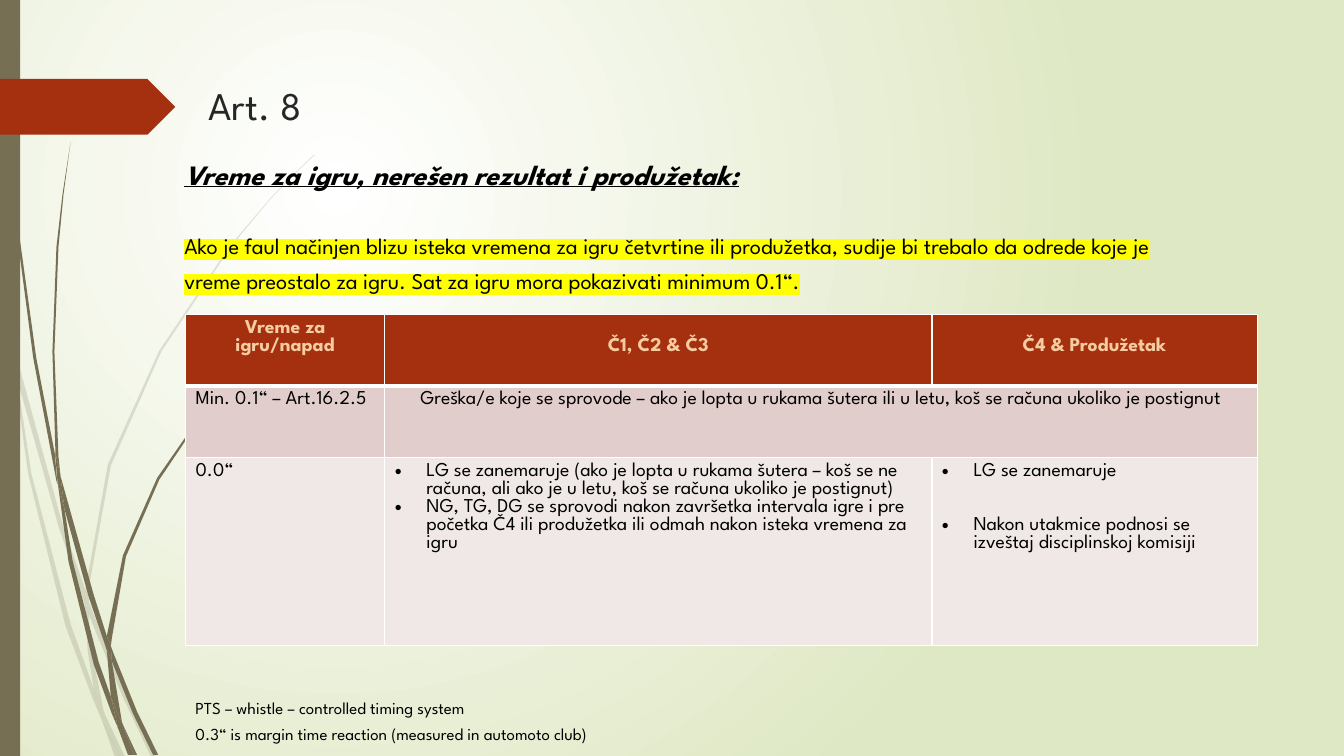
from lxml import etree
from pptx import Presentation
from pptx.dml.color import RGBColor
from pptx.enum import shapes, text
from pptx.oxml import ns
from pptx.util import Pt

COLORS = {"olive": "766F54", "rust": "A53010", "white": "FFFFFF", "meadow": "DFE8C4", "title": "262626",
          "black": "000000", "header": "F5CBA0", "marker": "FFFF00", "rose": "E1CDCC", "blush": "F0E8E7"}
FONT = "League Spartan"
PALE_WISPS = [
    [(11, 350), (9, 322), (0, 282), (0, 299), (10, 344)],
    [(58, 522), (84, 599), (85, 586), (62, 520), (14, 345), (17, 376)],
    [(92, 607), (88, 596), (88, 610), (123, 694), (150, 751), (155, 751), (127, 692)],
    [(119, 751), (124, 751), (105, 711)],
    [(93, 683), (70, 619), (31, 469), (17, 376), (11, 350), (28, 470), (65, 621), (92, 693), (101, 714), (99, 707)],
    [(84, 599), (87, 646), (93, 683), (96, 692), (105, 711), (103, 706), (91, 646), (88, 610), (88, 608)],
    [(88, 584), (110, 462), (160, 349), (229, 245), (268, 198), (290, 175), (312, 154), (312, 153), (289, 175),
     (268, 197), (228, 244), (158, 348), (107, 461), (85, 584), (85, 586), (88, 596)],
    [(101, 714), (114, 751), (119, 751)],
    [(88, 608), (88, 610), (88, 596), (85, 586), (84, 599)],
    [(96, 692), (93, 683), (99, 707), (101, 714), (119, 751), (105, 711)]]
DARK_WISPS = [
    [(7, 110), (17, 233), (33, 355), (56, 477), (57, 481), (55, 457), (55, 453), (36, 355), (19, 232), (8, 109),
     (5, 48), (4, 0), (3, 0), (4, 48)],
    [(88, 592), (106, 645), (106, 633), (106, 631), (93, 590), (60, 472), (64, 505)],
    [(113, 649), (110, 641), (111, 656), (132, 708), (152, 749), (157, 749), (136, 706)],
    [(110, 691), (98, 657), (72, 556), (64, 505), (57, 477), (68, 557), (93, 659), (111, 708), (117, 722), (116, 717)],
    [(60, 472), (58, 453), (54, 349), (58, 245), (63, 193), (70, 141), (62, 193), (56, 245), (52, 349), (55, 449)],
    [(133, 749), (136, 749), (122, 719)],
    [(57, 477), (64, 505), (60, 472), (55, 449), (55, 453)],
    [(111, 633), (125, 552), (158, 476), (205, 406), (231, 374), (245, 359), (261, 344), (260, 344), (245, 358),
     (231, 373), (204, 405), (156, 474), (122, 551), (106, 631), (110, 641)],
    [(117, 722), (127, 749), (131, 749)],
    [(106, 645), (110, 691), (116, 706), (122, 719), (121, 716), (111, 656), (109, 651)],
    [(106, 645), (109, 651), (111, 656), (110, 641), (106, 631), (106, 633)],
    [(116, 706), (110, 691), (116, 717), (117, 722), (130, 749), (133, 749), (122, 719)]]


def apply(target, **formats):
    """Set every given format value as an attribute of the target."""
    for name, value in formats.items():
        setattr(target, name, value)


def rgb(color):
    """Look up a named colour."""
    return RGBColor.from_string(COLORS[color])


def paint(shape, color):
    """Fill a shape flat, with neither line nor shadow."""
    shape.fill.solid()
    shape.fill.fore_color.rgb = rgb(color)
    shape.line.fill.background()
    shape.shadow.inherit = False


def write(paragraph, words, color, **formats):
    """Add one formatted run to a paragraph."""
    run = paragraph.add_run()
    run.text = words
    run.font.color.rgb = rgb(color)
    apply(run.font, name=FONT, **formats)
    return run


def add_background(slide):
    """Give the slide its round glow."""
    fill = slide.background.fill
    fill.gradient()
    for stop, color in zip(fill.gradient_stops, ("white", "meadow")):
        stop.color.rgb = rgb(color)
    linear = slide.element.find(".//" + ns.qn("a:lin"))
    glow = etree.Element(ns.qn("a:path"), path="circle")
    etree.SubElement(glow, ns.qn("a:fillToRect"), l="50000", t="50000", r="100000", b="100000")
    linear.getparent().replace(linear, glow)


def add_wisps(slide, corner, outlines, alpha=100):
    """Draw one group of grass blades from a corner, in hundredths of an inch."""
    group = slide.shapes.add_group_shape()
    for outline in outlines:
        builder = group.shapes.build_freeform(*outline[0], scale=Pt(0.72))
        builder.add_line_segments(outline[1:], close=True)
        blade = builder.convert_to_shape(*map(Pt, corner))
        paint(blade, "olive")
        color = blade.element.find(".//" + ns.qn("a:srgbClr"))
        etree.SubElement(color, ns.qn("a:alpha"), val=str(alpha * 1000))


def add_edge(slide, box):
    """Draw the side bar and the arrow tag in the left margin."""
    left, top, width, height = box
    for kind, offset, breadth, depth, color in (
            (shapes.MSO_SHAPE.RECTANGLE, 0, 14.4, height, "olive"),
            (shapes.MSO_SHAPE.PENTAGON, 56.4, width, 39.8, "rust")):
        paint(slide.shapes.add_shape(kind, *map(Pt, (left, top + offset, breadth, depth))), color)


def add_title(slide, box, words):
    """Place the title placeholder in the box."""
    title = slide.shapes.title
    apply(title, **dict(zip(("left", "top", "width", "height"), map(Pt, box))))
    apply(title.text_frame, vertical_anchor=text.MSO_ANCHOR.MIDDLE, word_wrap=True)
    paragraph = title.text_frame.paragraphs[0]
    paragraph.alignment = text.PP_ALIGN.LEFT
    write(paragraph, words, "title", size=Pt(28))


def add_text(slide, box, lines):
    """Write lines, each with its gap above and formats, and return the runs."""
    frame = slide.shapes.add_textbox(*map(Pt, box)).text_frame
    frame.word_wrap = True
    runs = []
    for index, (words, gap, formats) in enumerate(lines):
        paragraph = frame.add_paragraph() if index else frame.paragraphs[0]
        apply(paragraph, line_spacing=1.3, space_before=Pt(gap))
        runs.append(write(paragraph, words, "black", **formats))
    return runs


def highlight(run):
    """Mark a run with the yellow marker."""
    marker = etree.Element(ns.qn("a:highlight"))
    etree.SubElement(marker, ns.qn("a:srgbClr"), val=COLORS["marker"])
    run.font._element.find(ns.qn("a:solidFill")).addnext(marker)


def add_borders(cell, widths):
    """Draw white cell borders, given widths for left, right, top and bottom."""
    for index, (side, width) in enumerate(zip("LRTB", widths)):
        line = etree.Element(ns.qn("a:ln" + side), w=str(Pt(width)))
        fill = etree.SubElement(line, ns.qn("a:solidFill"))
        etree.SubElement(fill, ns.qn("a:srgbClr"), val=COLORS["white"])
        cell._tc.get_or_add_tcPr().insert(index, line)


def add_bullet(paragraph):
    """Give a paragraph a hanging bullet."""
    properties = paragraph._p.get_or_add_pPr()
    properties.set("marL", str(Pt(22.5)))
    properties.set("indent", str(Pt(-22.5)))
    etree.SubElement(properties, ns.qn("a:buFont"), typeface="Arial")
    etree.SubElement(properties, ns.qn("a:buChar"), char="•")


def fill_cell(cell, row, column, entries):
    """Format one table cell by its place and write its paragraphs."""
    header = row == 0
    cell.fill.solid()
    cell.fill.fore_color.rgb = rgb(("rust", "rose", "blush")[row])
    add_borders(cell, (1, 1, 3 if row == 1 else 1, 3 if header else 1))
    cell.margin_top = Pt(16.5 if header and column else 3.6)
    centred = header or (row == 1 and column)
    for index, words in enumerate(entries):
        paragraph = cell.text_frame.add_paragraph() if index else cell.text_frame.paragraphs[0]
        paragraph.alignment = text.PP_ALIGN.CENTER if centred else text.PP_ALIGN.LEFT
        paragraph.space_before = Pt(25.8 if index and column == 2 else 0)
        if row == 2 and column:
            add_bullet(paragraph)
        write(paragraph, words, "header" if header else "black", size=Pt(14), bold=header)


def add_rules_table(slide, box, rows):
    """Build the table of rules by remaining time in the box."""
    table = slide.shapes.add_table(3, 3, *map(Pt, box)).table
    for column, width in zip(table.columns, (142.4, 390.8, 232.4)):
        column.width = Pt(width)
    for row, height in zip(table.rows, (51, 51, 134.4)):
        row.height = Pt(height)
    for row_index, row in enumerate(rows):
        for column_index, entries in enumerate(row):
            fill_cell(table.cell(row_index, column_index), row_index, column_index, entries)
    table.cell(1, 1).merge(table.cell(1, 2))


presentation = Presentation()
apply(presentation, slide_width=Pt(960), slide_height=Pt(540))
slide = presentation.slides.add_slide(presentation.slide_layouts[5])
add_background(slide)
add_wisps(slide, (0, 0), PALE_WISPS, alpha=20)
add_wisps(slide, (0, 0), DARK_WISPS)
add_edge(slide, (0, 0, 125.2, 540))
add_title(slide, (141.8, 49.7, 128.2, 51.1), "Art. 8")
heading, advice = add_text(slide, (124.6, 101.5, 721.4, 94.3), [
    ("Vreme za igru, nerešen rezultat i produžetak:", 0, dict(size=Pt(20), bold=True, italic=True, underline=True)),
    ("Ako je faul načinjen blizu isteka vremena za igru četvrtine ili produžetka, sudije bi trebalo da odrede "
     "koje je vreme preostalo za igru. Sat za igru mora pokazivati minimum 0.1“.", 24, dict(size=Pt(16)))])
highlight(advice)
add_rules_table(slide, (132.5, 224.6, 765.6, 236.4), [
    [["Vreme za igru/napad"], ["Č1, Č2 & Č3"], ["Č4 & Produžetak"]],
    [["Min. 0.1“ – Art.16.2.5"], ["Greška/e koje se sprovode – ako je lopta u rukama šutera ili u letu, "
                                  "koš se računa ukoliko je postignut"], []],
    [["0.0“"], ["LG se zanemaruje (ako je lopta u rukama šutera – koš se ne računa, ali ako je u letu, "
                "koš se računa ukoliko je postignut)",
                "NG, TG, DG se sprovodi nakon završetka intervala igre i pre početka Č4 ili produžetka "
                "ili odmah nakon isteka vremena za igru"],
     ["LG se zanemaruje", "Nakon utakmice podnosi se izveštaj disciplinskoj komisiji"]]])
add_text(slide, (132.5, 490.3, 383.8, 36), [(words, 0, dict(size=Pt(12))) for words in (
    "PTS – whistle – controlled timing system", "0.3“ is margin time reaction (measured in automoto club)")])
presentation.save("out.pptx")
